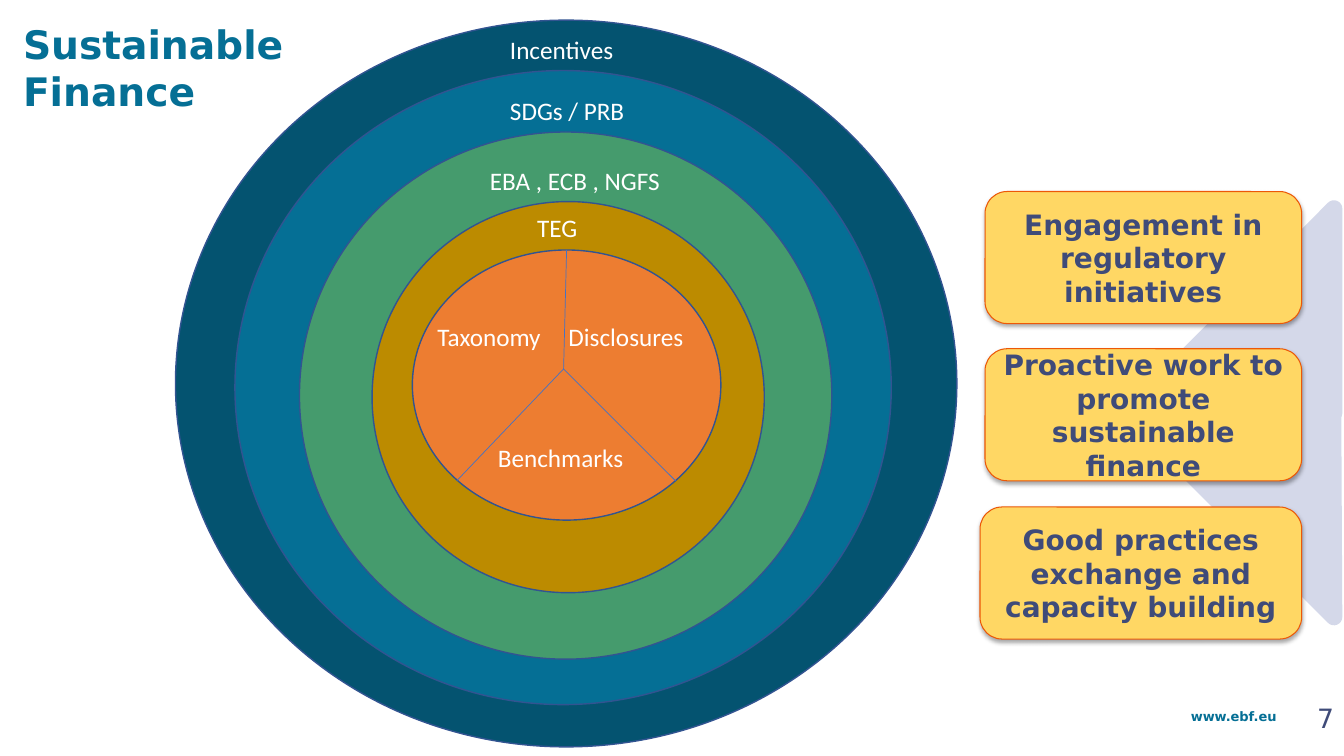
"""Build the Sustainable Finance slide with nested circles and three action boxes."""
from lxml import etree
from pptx import Presentation
from pptx.dml.color import RGBColor
from pptx.enum.shapes import MSO_CONNECTOR, MSO_SHAPE
from pptx.enum.text import MSO_ANCHOR, PP_ALIGN
from pptx.oxml import parse_xml
from pptx.oxml.ns import nsdecls, qn
from pptx.util import Inches, Pt

CIRCLE = MSO_SHAPE.FLOWCHART_CONNECTOR
ROUNDED = MSO_SHAPE.ROUNDED_RECTANGLE
STRAIGHT = MSO_CONNECTOR.STRAIGHT
TOP, MIDDLE = MSO_ANCHOR.TOP, MSO_ANCHOR.MIDDLE
LEFT, CENTER, RIGHT = PP_ALIGN.LEFT, PP_ALIGN.CENTER, PP_ALIGN.RIGHT
SANS = "DejaVu Sans"
NAVY, TEAL, WHITE, PALE = "3F4B79", "056F95", "FFFFFF", "D4D8E9"


def paint(s, fill, line, width):
    s.shadow.inherit = False
    s.fill.solid()
    s.fill.fore_color.rgb = RGBColor.from_string(fill)
    s.line.color.rgb = RGBColor.from_string(line)
    s.line.width = Pt(width)


def write(s, text, size, color, font=SANS, bold=False, align=LEFT, anchor=TOP):
    tf = s.text_frame
    tf.word_wrap = True
    tf.vertical_anchor = anchor
    p = tf.paragraphs[0]
    p.alignment = align
    r = p.add_run()
    r.text = text
    r.font.size = Pt(size)
    r.font.name = font
    r.font.bold = bold
    r.font.color.rgb = RGBColor.from_string(color)


prs = Presentation()
prs.slide_width, prs.slide_height = Inches(13.33), Inches(7.5)
shapes = prs.slides.add_slide(prs.slide_layouts[6]).shapes

builder = shapes.build_freeform(Inches(11.21), Inches(4.1))
corners = [(13.23, 2.07), (13.23, 4.1), (13.1, 4.09), (13.22, 4.1), (13.23, 6.12)]
builder.add_line_segments([(Inches(x), Inches(y)) for x, y in corners])
arrow = builder.convert_to_shape()
paint(arrow, PALE, PALE, 12)
etree.SubElement(arrow.line._get_or_add_ln(), qn("a:round"))

site = shapes.add_textbox(Inches(10.25), Inches(6.98), Inches(2.51), Inches(0.41))
write(site, "www.ebf.eu", 9.3, TEAL, bold=True, align=RIGHT)
number = shapes.add_textbox(Inches(10.33), Inches(6.92), Inches(3), Inches(0.4))
write(number, "7", 19, NAVY, align=RIGHT, anchor=MIDDLE)

circles = [
    (1.74, 0.2, 7.75, 7.21, "045370"),
    (2.33, 0.7, 6.51, 6.29, TEAL),
    (2.97, 1.31, 5.28, 5.23, "459B6D"),
    (3.69, 2, 3.89, 3.88, "BC8B00"),
    (4.09, 2.48, 3.06, 2.68, "ED7D31"),
]
for x, y, w, h, color in circles:
    s = shapes.add_shape(CIRCLE, Inches(x), Inches(y), Inches(w), Inches(h))
    paint(s, color, "325491", 1)

for x, y in [(5.62, 2.48), (4.53, 4.77), (6.7, 4.77)]:
    s = shapes.add_connector(STRAIGHT, Inches(x), Inches(y), Inches(5.59), Inches(3.66))
    s.line.color.rgb = RGBColor.from_string("4472C4")
    s.line.width = Pt(0.5)
    etree.SubElement(s._element.spPr, qn("a:effectLst"))

labels = [
    ("Incentives", 4.96, 0.29, 1.74),
    ("SDGs / PRB", 4.96, 0.9, 1.53),
    ("EBA , ECB , NGFS", 4.76, 1.59, 1.98),
    ("TEG", 5.23, 2.06, 0.8),
    ("Taxonomy", 4.24, 3.14, 1.3),
    ("Disclosures", 5.54, 3.14, 1.44),
    ("Benchmarks", 4.84, 4.34, 1.53),
]
for text, x, y, w in labels:
    s = shapes.add_textbox(Inches(x), Inches(y), Inches(w), Inches(0.4))
    write(s, text, 18, WHITE, font="Calibri")

title = shapes.add_textbox(Inches(0.13), Inches(0.15), Inches(3.09), Inches(1.03))
write(title, "Sustainable Finance", 28, TEAL, bold=True)

actions = [
    ("Engagement in regulatory initiatives", 9.77, 1.9),
    ("Proactive work to promote sustainable finance", 9.77, 3.46),
    ("Good practices exchange and capacity building", 9.72, 5.03),
]
for text, x, y in actions:
    s = shapes.add_shape(ROUNDED, Inches(x), Inches(y), Inches(12.91 - x), Inches(1.31))
    paint(s, "FFD764", "EC5807", 0.75)
    s._element.spPr.find(qn("a:effectLst")).append(parse_xml(
        f'<a:outerShdw {nsdecls("a")} blurRad="40000" dist="23000" dir="5400000" rotWithShape="0">'
        '<a:srgbClr val="000000"><a:alpha val="35000"/></a:srgbClr></a:outerShdw>'))
    write(s, text, 20, NAVY, bold=True, align=CENTER, anchor=MIDDLE)

prs.save("out.pptx")
